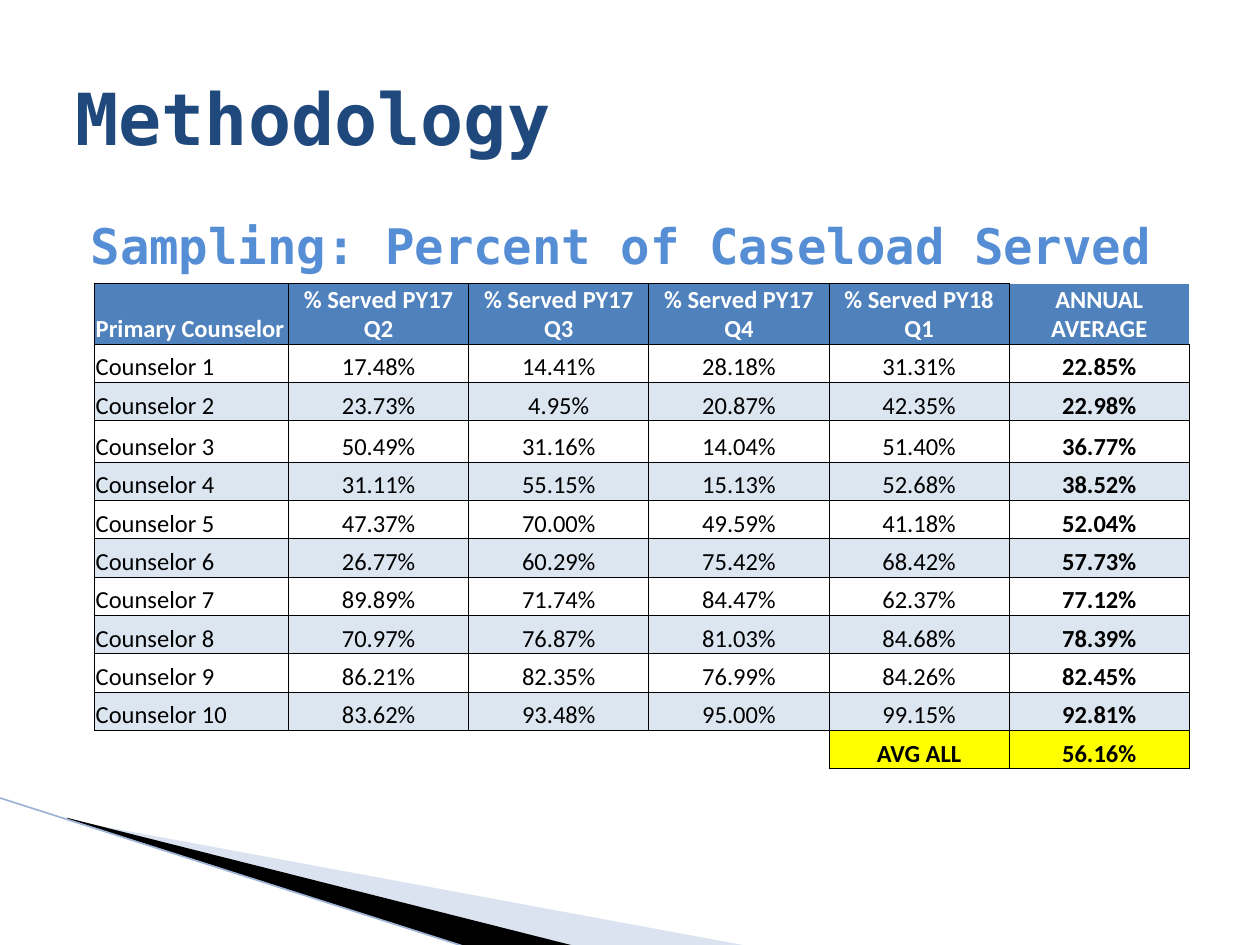
from typing import NamedTuple, Optional

from lxml.etree import SubElement
from pptx import Presentation
from pptx.dml.color import RGBColor as Rgb
from pptx.enum.text import MSO_ANCHOR as Anchor, PP_ALIGN as Align
from pptx.oxml.ns import qn
from pptx.util import Inches, Pt

COLORS = {
    "navy": "1F497D",
    "sky": "558ED5",
    "header": "4F81BD",
    "band": "DCE6F1",
    "total": "FFFF00",
    "wedge": "A7B9DB",
    "edge": "9EB3D6",
    "black": "000000",
    "white": "FFFFFF",
}
HEADERS = ["Primary Counselor", "% Served PY17 Q2", "% Served PY17 Q3",
           "% Served PY17 Q4", "% Served PY18 Q1", "ANNUAL AVERAGE"]
SERVED = [
    ("17.48%", "14.41%", "28.18%", "31.31%", "22.85%"),
    ("23.73%", "4.95%", "20.87%", "42.35%", "22.98%"),
    ("50.49%", "31.16%", "14.04%", "51.40%", "36.77%"),
    ("31.11%", "55.15%", "15.13%", "52.68%", "38.52%"),
    ("47.37%", "70.00%", "49.59%", "41.18%", "52.04%"),
    ("26.77%", "60.29%", "75.42%", "68.42%", "57.73%"),
    ("89.89%", "71.74%", "84.47%", "62.37%", "77.12%"),
    ("70.97%", "76.87%", "81.03%", "84.68%", "78.39%"),
    ("86.21%", "82.35%", "76.99%", "84.26%", "82.45%"),
    ("83.62%", "93.48%", "95.00%", "99.15%", "92.81%"),
]
TOTALS = ["", "", "", "", "AVG ALL", "56.16%"]


class Wedge(NamedTuple):
    points: list[tuple[float, float]]
    color: str
    opacity: int


class Heading(NamedTuple):
    text: str
    top: float
    height: float
    left_inset: float
    top_inset: float
    size: int
    color: str
    anchor: Anchor


class CellStyle(NamedTuple):
    fill: Optional[str]
    color: str
    bold: bool
    sides: str


WEDGES = [
    Wedge([(0.55, 6.51), (5.95, 7.51), (4.56, 7.51), (0.55, 6.5)], "wedge", 40),
    Wedge([(0.53, 6.49), (4.57, 7.51), (3.72, 7.52), (0.54, 6.5)], "black", 100),
]
HEADINGS = [
    Heading("Methodology", 0.3, 1.25, 0.1, 0.05, 41, "navy", Anchor.MIDDLE),
    Heading("Sampling: Percent of Caseload Served", 1.62, 4.95, 0.22, 0.09, 28,
            "sky", Anchor.TOP),
]


def rgb(name: str) -> Rgb:
    """Return the named colour."""
    return Rgb.from_string(COLORS[name])


def draw_wedge(page, wedge: Wedge) -> None:
    """Draw one filled corner wedge."""
    start, *rest = [(Inches(x), Inches(y)) for x, y in wedge.points]
    builder = page.shapes.build_freeform(*start)
    builder.add_line_segments(rest, close=True)
    shape = builder.convert_to_shape()
    shape.shadow.inherit = False
    shape.fill.solid()
    shape.fill.fore_color.rgb = rgb(wedge.color)
    shape.line.fill.background()
    if wedge.opacity < 100:
        color = shape.fill._xPr.find(qn("a:solidFill"))[0]
        SubElement(color, qn("a:alpha"), val=str(wedge.opacity * 1000))


def draw_edge(page) -> None:
    """Draw the thin line along the wedges."""
    edge = page.shapes.add_connector(
        1, Inches(-0.01), Inches(6.33), Inches(3.71), Inches(7.52))
    edge.line.color.rgb = rgb("edge")
    edge.line.width = Pt(0.95)
    SubElement(edge._element.spPr, qn("a:effectLst"))


def draw_heading(page, heading: Heading) -> None:
    """Draw one bold monospaced heading."""
    box = page.shapes.add_textbox(
        Inches(0.5), Inches(heading.top), Inches(9), Inches(heading.height))
    frame = box.text_frame
    frame.word_wrap = True
    frame.vertical_anchor = heading.anchor
    frame.margin_left = Inches(heading.left_inset)
    frame.margin_top = Inches(heading.top_inset)
    frame.text = heading.text
    font = frame.paragraphs[0].runs[0].font
    font.name = "DejaVu Sans Mono"
    font.size = Pt(heading.size)
    font.bold = True
    font.color.rgb = rgb(heading.color)


def cell_style(row: int, column: int) -> CellStyle:
    """Return the look of a table cell from its place."""
    last_column = column == len(HEADERS) - 1
    if row == 0:
        return CellStyle("header", "white", True, "LB" if last_column else "LRTB")
    if row <= len(SERVED):
        fill = "band" if row % 2 == 0 else None
        return CellStyle(fill, "black", last_column, "LRTB")
    if TOTALS[column]:
        return CellStyle("total", "black", True, "LRTB")
    return CellStyle(None, "black", False, "TR" if TOTALS[column + 1] else "T")


def set_borders(cell, sides: str) -> None:
    """Line the given sides of a cell and clear the others."""
    properties = cell._tc.get_or_add_tcPr()
    for side in "LRTB":
        line = SubElement(properties, qn(f"a:ln{side}"), w=str(Pt(0.5)))
        if side in sides:
            fill = SubElement(line, qn("a:solidFill"))
            SubElement(fill, qn("a:srgbClr"), val=COLORS["black"])
        else:
            SubElement(line, qn("a:noFill"))


def fill_cell(cell, text: str, style: CellStyle, align: Align) -> None:
    """Write and format one table cell."""
    cell.margin_left = cell.margin_right = cell.margin_top = Inches(0.01)
    cell.margin_bottom = 0
    cell.vertical_anchor = Anchor.BOTTOM
    set_borders(cell, style.sides)
    if style.fill:
        cell.fill.solid()
        cell.fill.fore_color.rgb = rgb(style.fill)
    else:
        cell.fill.background()
    para = cell.text_frame.paragraphs[0]
    para.alignment = align
    if not text:
        SubElement(para._p, qn("a:endParaRPr"), sz="1400")
        return
    para.text = text
    font = para.runs[0].font
    font.name = "Calibri"
    font.size = Pt(14)
    font.bold = style.bold
    font.color.rgb = rgb(style.color)


def draw_table(page) -> None:
    """Draw the table of caseload percentages."""
    rows = [HEADERS]
    rows += [[f"Counselor {n}", *values] for n, values in enumerate(SERVED, 1)]
    rows.append(TOTALS)
    total, header, tall = 3.85, 0.48, 0.33
    table = page.shapes.add_table(
        len(rows), len(HEADERS), Inches(0.75), Inches(2.25),
        Inches(8.69), Inches(total)).table
    for index, column in enumerate(table.columns):
        column.width = Inches(1.43 if index else 1.54)
    heights = {0: header, 3: tall}
    common = (total - header - tall) / (len(rows) - len(heights))
    for r, texts in enumerate(rows):
        table.rows[r].height = Inches(heights.get(r, common))
        for c, text in enumerate(texts):
            align = Align.CENTER if c else Align.LEFT
            fill_cell(table.cell(r, c), text, cell_style(r, c), align)


def main() -> None:
    """Build the methodology slide."""
    deck = Presentation()
    deck.slide_width, deck.slide_height = Inches(10), Inches(7.5)
    page = deck.slides.add_slide(deck.slide_layouts[6])
    for wedge in WEDGES:
        draw_wedge(page, wedge)
    draw_edge(page)
    for heading in HEADINGS:
        draw_heading(page, heading)
    draw_table(page)
    deck.save("out.pptx")


if __name__ == "__main__":
    main()
